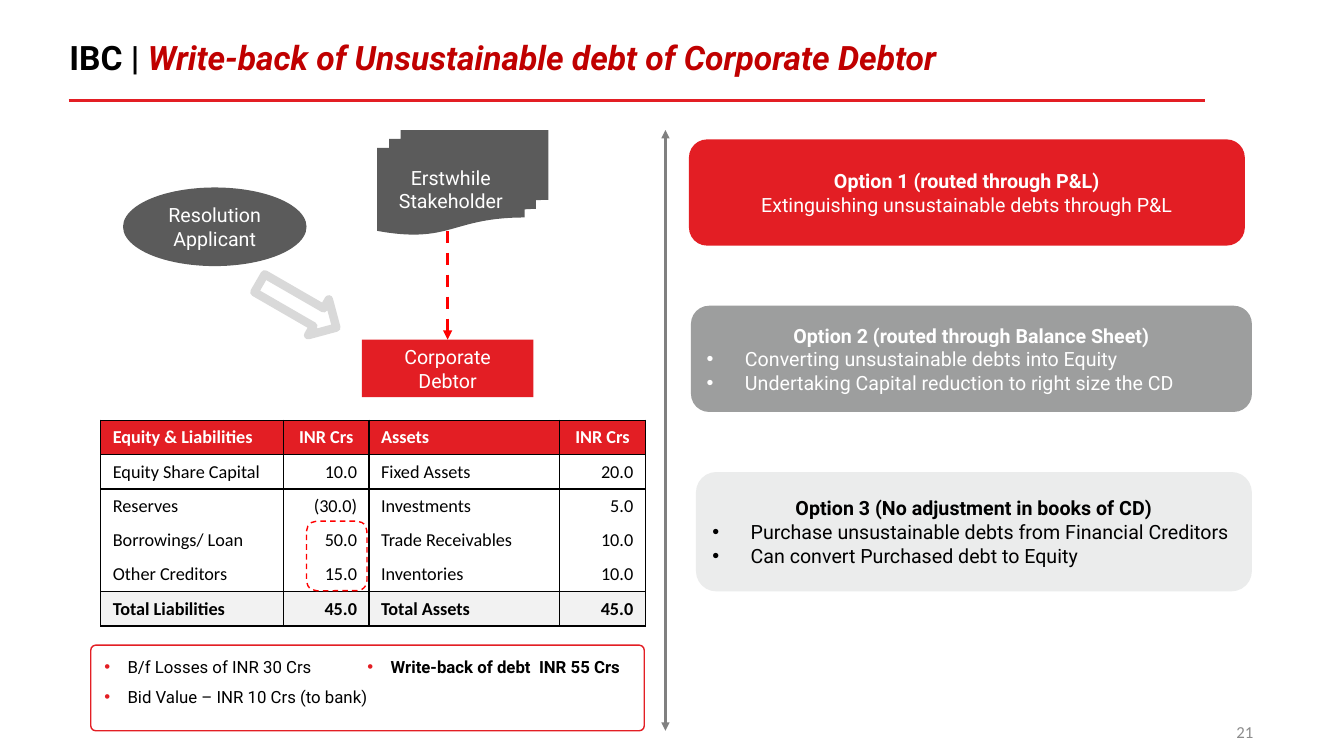
from lxml.etree import SubElement
from pptx import Presentation
from pptx.dml.color import RGBColor
from pptx.enum.dml import MSO_LINE
from pptx.enum.shapes import MSO_CONNECTOR, MSO_SHAPE as SHAPE
from pptx.enum.text import MSO_ANCHOR as ANCHOR, PP_ALIGN as ALIGN
from pptx.oxml.ns import qn
from pptx.util import Pt

PX = 9144  # 100 px to the inch
COLORS = {
    "red": "E31E24", "bright": "FF0000", "title": "C00000", "dark": "5B5B5B",
    "gray": "9D9E9E", "pale": "EBECEC", "total": "F2F2F2", "arrow": "D9D9D9",
    "divider": "808080", "number": "8C8C8C", "white": "FFFFFF", "black": "000000",
}

TITLE = [("IBC | ", "black", False),
         ("Write-back of Unsustainable debt of Corporate Debtor", "title", True)]
PAGE = "21"

# kind, box, fill, text
PARTIES = {
    "stakeholder": (SHAPE.FLOWCHART_MULTIDOCUMENT, (374, 129, 170, 104), "dark",
                    "Erstwhile Stakeholder"),
    "debtor": (SHAPE.RECTANGLE, (359, 337, 170, 57), "red", "Corporate Debtor"),
    "applicant": (SHAPE.OVAL, (122, 186, 182, 78), "dark", "Resolution Applicant"),
}

# box, fill, text colour, heading, lines, bulleted
OPTIONS = [
    ((684, 139, 550, 104), "red", "white", "Option 1 (routed through P&L)",
     ["Extinguishing unsustainable debts through P&L"], False),
    ((686, 304, 555, 104), "gray", "white", "Option 2 (routed through Balance Sheet)",
     ["Converting unsustainable debts into Equity",
      "Undertaking Capital reduction to right size the CD"], True),
    ((691, 469, 550, 117), "pale", "black", "Option 3 (No adjustment in books of CD)",
     ["Purchase unsustainable debts from Financial Creditors",
      "Can convert Purchased debt to Equity"], True),
]

NOTES = [("B/f Losses of INR 30 Crs", False),
         ("Bid Value – INR 10 Crs (to bank)", False),
         ("Write-back of debt  INR 55 Crs", True)]

BALANCE = [
    ("Equity & Liabilities", "INR Crs", "Assets", "INR Crs"),
    ("Equity Share Capital", "10.0", "Fixed Assets", "20.0"),
    ("Reserves", "(30.0)", "Investments", "5.0"),
    ("Borrowings/ Loan", "50.0", "Trade Receivables", "10.0"),
    ("Other Creditors", "15.0", "Inventories", "10.0"),
    ("Total Liabilities", "45.0", "Total Assets", "45.0"),
]
COL_WIDTHS = (181, 85, 189, 85)
ROW_HEIGHT = 34
RULED_EDGES = {0, 1, 2, 5, 6}  # row edges that carry a horizontal rule


def rgb(name):
    return RGBColor.from_string(COLORS[name])


def emu(*lengths):
    return [n * PX for n in lengths]


def add_run(p, text, size, color, bold=False, italic=False, font="Roboto"):
    r = p.add_run()
    r.text = text
    r.font.name, r.font.size = font, Pt(size)
    r.font.bold, r.font.italic = bold, italic
    r.font.color.rgb = rgb(color)


def set_bullet(p, indent, color=None):
    pPr = p._p.get_or_add_pPr()
    pPr.set("marL", str(indent * PX))
    pPr.set("indent", str(-indent * PX))
    if color:
        SubElement(SubElement(pPr, qn("a:buClr")), qn("a:srgbClr"), val=COLORS[color])
    SubElement(pPr, qn("a:buFont"), typeface="Arial")
    SubElement(pPr, qn("a:buChar"), char="•")


def set_margins(holder, left, top, right, bottom):
    holder.margin_left, holder.margin_top = emu(left, top)
    holder.margin_right, holder.margin_bottom = emu(right, bottom)


def paragraphs(tf, count):
    return [tf.paragraphs[0]] + [tf.add_paragraph() for _ in range(count - 1)]


def add_shape(s, kind, box, fill=None, line=None, width=1):
    sp = s.shapes.add_shape(kind, *emu(*box))
    sp.shadow.inherit = False
    if fill:
        sp.fill.solid()
        sp.fill.fore_color.rgb = rgb(fill)
    else:
        sp.fill.background()
    if line:
        sp.line.color.rgb = rgb(line)
        sp.line.width = Pt(width)
    else:
        sp.line.fill.background()
    sp.text_frame.word_wrap = True
    sp.text_frame.vertical_anchor = ANCHOR.MIDDLE
    return sp


def add_line(s, ends, color, width, heads=()):
    """heads lists the arrowed ends: headEnd is the start, tailEnd the finish."""
    c = s.shapes.add_connector(MSO_CONNECTOR.STRAIGHT, *emu(*ends))
    c.line.color.rgb = rgb(color)
    c.line.width = Pt(width)
    for head in heads:
        SubElement(c.line._get_or_add_ln(), qn("a:" + head), type="triangle")
    SubElement(c.element.spPr, qn("a:effectLst"))
    return c


def add_text(s, box, align=ALIGN.LEFT):
    tf = s.shapes.add_textbox(*emu(*box)).text_frame
    tf.word_wrap = True
    tf.vertical_anchor = ANCHOR.MIDDLE
    tf.paragraphs[0].alignment = align
    return tf.paragraphs[0]


def set_borders(cell, row):
    tcPr = cell._tc.get_or_add_tcPr()
    for side, ruled in (("L", True), ("R", True), ("T", row in RULED_EDGES),
                        ("B", row + 1 in RULED_EDGES)):
        ln = SubElement(tcPr, qn("a:ln" + side), w=str(Pt(1) if ruled else 0))
        if ruled:
            SubElement(SubElement(ln, qn("a:solidFill")), qn("a:srgbClr"),
                       val=COLORS["black"])
        else:
            SubElement(ln, qn("a:noFill"))


def add_balance_sheet(s, left, top):
    last = len(BALANCE) - 1
    size = (sum(COL_WIDTHS), ROW_HEIGHT * len(BALANCE))
    table = s.shapes.add_table(len(BALANCE), len(COL_WIDTHS),
                               *emu(left, top, *size)).table
    for col, width in zip(table.columns, COL_WIDTHS):
        col.width = width * PX
    for i, values in enumerate(BALANCE):
        table.rows[i].height = ROW_HEIGHT * PX
        for j, value in enumerate(values):
            cell = table.cell(i, j)
            set_borders(cell, i)
            set_margins(cell, 12, 6, 12, 6)
            if i in (0, last):
                cell.fill.solid()
                cell.fill.fore_color.rgb = rgb("total" if i else "red")
            else:
                cell.fill.background()
            amount = j % 2 == 1
            cell.vertical_anchor = ANCHOR.BOTTOM if amount and i else ANCHOR.MIDDLE
            p = cell.text_frame.paragraphs[0]
            if amount:
                p.alignment = ALIGN.RIGHT if i else ALIGN.CENTER
            add_run(p, value, 13, "black" if i else "white", i in (0, last),
                    font="Calibri")


def add_option(s, box, fill, color, heading, lines, bulleted):
    tf = add_shape(s, SHAPE.ROUNDED_RECTANGLE, box, fill, fill).text_frame
    first, *rest = paragraphs(tf, 1 + len(lines))
    first.alignment = ALIGN.CENTER
    add_run(first, heading, 14, color, True)
    for p, text in zip(rest, lines):
        p.alignment = ALIGN.LEFT if bulleted else ALIGN.CENTER
        if bulleted:
            set_bullet(p, 38)
        add_run(p, text, 14, color)


def add_notes_box(s):
    sp = add_shape(s, SHAPE.ROUNDED_RECTANGLE, (90, 640, 549, 85), line="red")
    sp.adjustments[0] = 0.06
    tf = sp.text_frame
    tf.vertical_anchor = ANCHOR.TOP
    set_margins(tf, 12, 0, 12, 12)
    sp.element.txBody.bodyPr.set("numCol", "2")
    for p, (text, bold) in zip(paragraphs(tf, len(NOTES)), NOTES):
        p.alignment = ALIGN.LEFT
        p.line_spacing = 1.5
        set_bullet(p, 23, "red")
        add_run(p, text, 12, "black", bold)


def main():
    prs = Presentation()
    prs.slide_width, prs.slide_height = emu(1333, 750)
    s = prs.slides.add_slide(prs.slide_layouts[6])

    party = {}
    for name, (kind, box, fill, text) in PARTIES.items():
        party[name] = add_shape(s, kind, box, fill)
        p = party[name].text_frame.paragraphs[0]
        p.alignment = ALIGN.CENTER
        add_run(p, text, 14, "white")
    set_margins(party["debtor"].text_frame, 12, 6, 12, 6)

    claim = add_line(s, (444, 229, 444, 337), "bright", 2.25, ["tailEnd"])
    claim.line.dash_style = MSO_LINE.DASH
    claim.end_connect(party["debtor"], 0)
    add_line(s, (660, 129, 660, 725), "divider", 1.5, ["headEnd", "tailEnd"])
    takeover = add_shape(s, SHAPE.UP_ARROW, (275, 259, 41, 88), line="arrow", width=6)
    takeover.rotation = 120

    add_notes_box(s)
    add_balance_sheet(s, 100, 417)
    for option in OPTIONS:
        add_option(s, *option)

    add_run(add_text(s, (973, 706, 280, 40), ALIGN.RIGHT), PAGE, 12, "number",
            font="Calibri")
    debts = add_shape(s, SHAPE.ROUNDED_RECTANGLE, (304, 517, 60, 69), line="bright")
    debts.line.dash_style = MSO_LINE.DASH

    add_line(s, (68, 100, 1195, 100), "red", 2.25)
    p = add_text(s, (59, 25, 1113, 69))
    p.line_spacing = 0.9
    for text, color, italic in TITLE:
        add_run(p, text, 24, color, True, italic)
    prs.save("out.pptx")


if __name__ == "__main__":
    main()
